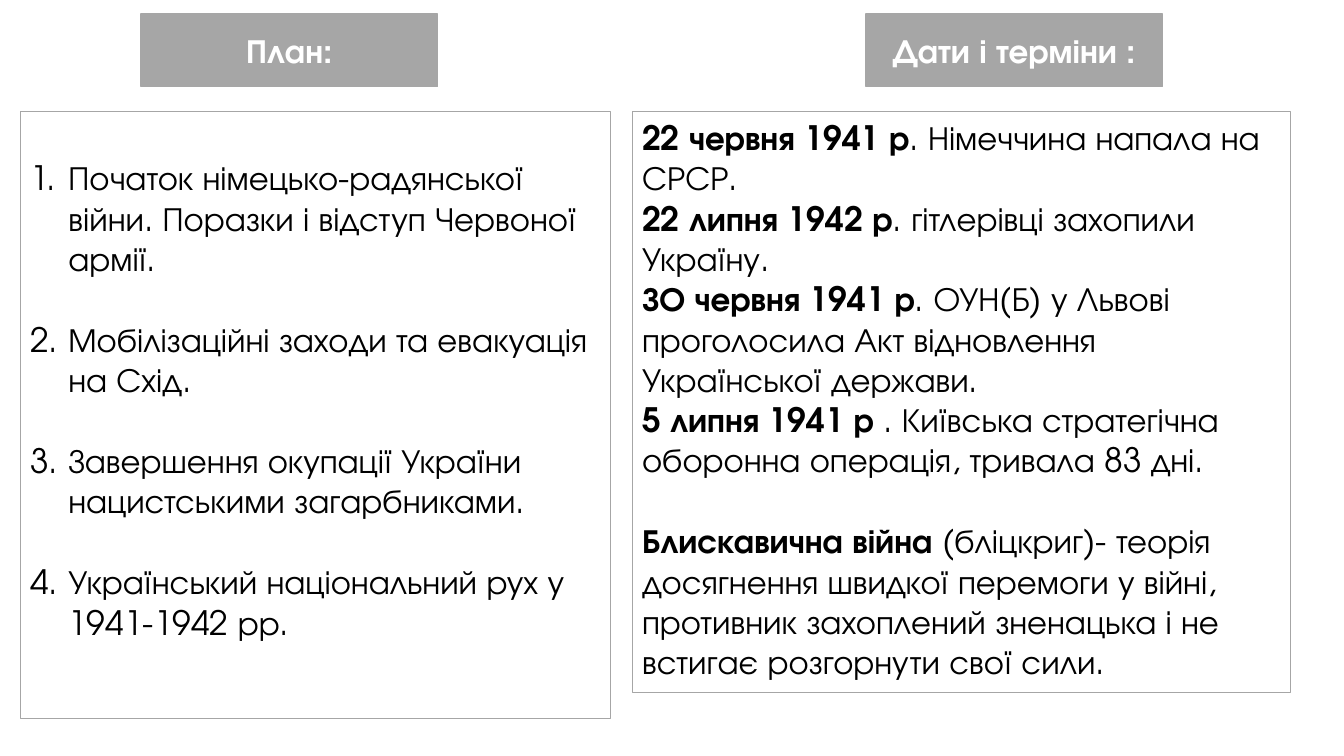
import pptx
import pptx.dml.color
import pptx.enum.shapes
import pptx.enum.text
import pptx.oxml.xmlchemy
import pptx.util
from pptx.util import Inches, Pt

FONT = "TeX Gyre Adventor"
GREY, WHITE, BLACK = "A6A6A6", "FFFFFF", "000000"
TEXT_SIZE = 24
BLANK_LINE = 29
NUMBER_INDENT = 0.38
PANEL_TOP = 1.11

HEADINGS = [("План:", 1.4), ("Дати і терміни :", 8.59)]

PLAN = [
    "Початок німецько-радянської війни. Поразки і відступ Червоної армії.",
    "Мобілізаційні заходи та евакуація на Схід.",
    "Завершення окупації України нацистськими загарбниками.",
    "Український національний рух у 1941-1942 рр.",
]

DATES = [
    ("22 червня 1941 р", ". Німеччина напала на СРСР."),
    ("22 липня 1942 р", ". гітлерівці захопили Україну."),
    ("ЗО червня 1941 р", ". ОУН(Б) у Львові проголосила Акт відновлення Української держави."),
    ("5 липня 1941 р ", ". Київська стратегічна оборонна операція, тривала 83 дні."),
]

TERMS = [
    ("Блискавична війна ", "(бліцкриг)- теорія досягнення швидкої перемоги у війні, "
     "противник захоплений зненацька і не встигає розгорнути свої сили."),
]


def color(value):
    return pptx.dml.color.RGBColor.from_string(value)


def add_box(slide, left, top, width, height, fill=None, line_width=0.75):
    """Add a grey-bordered rectangle and return its text frame."""
    shape = slide.shapes.add_shape(
        pptx.enum.shapes.MSO_SHAPE.RECTANGLE,
        Inches(left), Inches(top), Inches(width), Inches(height))
    shape.shadow.inherit = False
    if fill:
        shape.fill.solid()
        shape.fill.fore_color.rgb = color(fill)
    else:
        shape.fill.background()
    shape.line.color.rgb = color(GREY)
    shape.line.width = Pt(line_width)
    frame = shape.text_frame
    frame.word_wrap = True
    frame.vertical_anchor = (pptx.enum.text.MSO_ANCHOR.MIDDLE if fill
                             else pptx.enum.text.MSO_ANCHOR.TOP)
    return frame


def add_paragraph(frame, index, runs, text_color=BLACK, **formats):
    """Write (text, bold) runs into the paragraph at the given index."""
    paragraph = frame.paragraphs[0] if index == 0 else frame.add_paragraph()
    formats = {"alignment": pptx.enum.text.PP_ALIGN.LEFT, **formats}
    for name, value in formats.items():
        setattr(paragraph, name, value)
    for text, bold in runs:
        run = paragraph.add_run()
        run.text = text
        for name, value in {"name": FONT, "size": Pt(TEXT_SIZE), "bold": bold}.items():
            setattr(run.font, name, value)
        run.font.color.rgb = color(text_color)
    return paragraph


def number(paragraph):
    """Give the paragraph an automatic number with a hanging indent."""
    properties = paragraph._p.get_or_add_pPr()
    properties.set("marL", str(Inches(NUMBER_INDENT)))
    properties.set("indent", str(-Inches(NUMBER_INDENT)))
    bullet = pptx.oxml.xmlchemy.OxmlElement("a:buAutoNum")
    bullet.set("type", "arabicPeriod")
    properties.append(bullet)


def main():
    presentation = pptx.Presentation()
    presentation.slide_width = Inches(13.33)
    presentation.slide_height = Inches(7.5)
    slide = presentation.slides.add_slide(presentation.slide_layouts[6])

    for text, left in HEADINGS:
        frame = add_box(slide, left, 0.14, 2.94, 0.72, fill=GREY, line_width=1)
        add_paragraph(frame, 0, [(text, True)], WHITE,
                      alignment=pptx.enum.text.PP_ALIGN.CENTER)

    plan = add_box(slide, 0.2, PANEL_TOP, 5.86, 6.02)
    plan.margin_top = Inches(0.45)
    for index, text in enumerate(PLAN):
        number(add_paragraph(plan, index, [(text, False)], space_after=Pt(BLANK_LINE)))

    dates = add_box(slide, 6.27, PANEL_TOP, 6.53, 5.76)
    for index, (lead, rest) in enumerate(DATES + TERMS):
        gap = BLANK_LINE if index == len(DATES) else 0
        add_paragraph(dates, index, [(lead, True), (rest, False)], space_before=Pt(gap))

    presentation.save("out.pptx")


if __name__ == "__main__":
    main()
